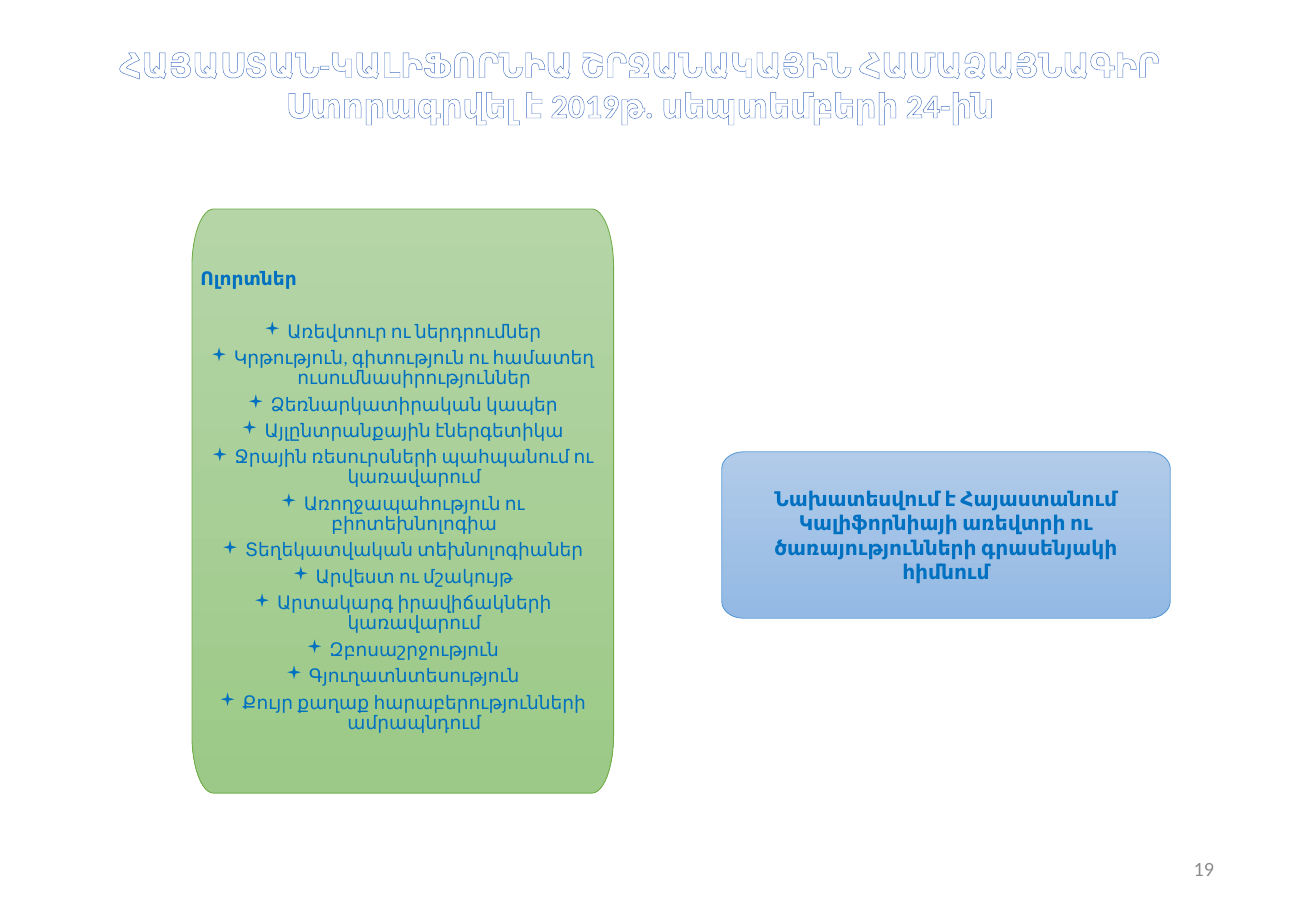
from math import cos, pi, sin

from lxml import etree
from pptx import Presentation
from pptx.dml.color import RGBColor
from pptx.enum.text import MSO_ANCHOR, MSO_AUTO_SIZE, PP_ALIGN
from pptx.oxml.ns import qn
from pptx.util import Pt

PX = 9144  # 100 px to the inch
LEFT, CENTER, RIGHT = PP_ALIGN.LEFT, PP_ALIGN.CENTER, PP_ALIGN.RIGHT
TOP, MIDDLE = MSO_ANCHOR.TOP, MSO_ANCHOR.MIDDLE
GROW = MSO_AUTO_SIZE.SHAPE_TO_FIT_TEXT

FONT = "Calibri"
BLUE = "0070C0"
CORNER_STEPS = 12

TITLE = [
    "ՀԱՅԱՍՏԱՆ-ԿԱԼԻՖՈՐՆԻԱ ՇՐՋԱՆԱԿԱՅԻՆ ՀԱՄԱՁԱՅՆԱԳԻՐ",
    "Ստորագրվել է 2019թ. սեպտեմբերի 24-ին",
]
AREAS = [
    "Առեվտուր ու ներդրումներ",
    "Կրթություն, գիտություն ու համատեղ ուսումնասիրություններ",
    "Ձեռնարկատիրական կապեր",
    "Այլընտրանքային էներգետիկա",
    "Ջրային ռեսուրսների պահպանում ու կառավարում",
    "Առողջապահություն ու բիոտեխնոլոգիա",
    "Տեղեկատվական տեխնոլոգիաներ",
    "Արվեստ ու մշակույթ",
    "Արտակարգ իրավիճակների կառավարում",
    "Զբոսաշրջություն",
    "Գյուղատնտեսություն",
    "Քույր քաղաք հարաբերությունների ամրապնդում",
]
OFFICE = "Նախատեսվում է Հայաստանում Կալիֆորնիայի առեվտրի ու ծառայությունների գրասենյակի հիմնում"


def px(n):
    return int(n * PX)


def rgb(color):
    return RGBColor.from_string(color)


def set_attrs(obj, values):
    for name, value in values.items():
        setattr(obj, name, value)


def place(sp, box):
    set_attrs(sp, dict(zip(("left", "top", "width", "height"), map(px, box))))


def add_text(tf, text, size, color, bold=False, **para):
    """Fill the frame's first paragraph if it is empty, else append one."""
    p = tf.paragraphs[0]
    if p.runs:
        p = tf.add_paragraph()
    set_attrs(p, para)
    r = p.add_run()
    r.text = text
    set_attrs(r.font, {"name": FONT, "size": Pt(size), "bold": bold})
    r.font.color.rgb = rgb(color)
    return p


def outline_text(p, color, width):
    """Draw a line round the letters of each run."""
    for r in p.runs:
        ln = etree.Element(qn("a:ln"), w=str(Pt(width)))
        fill = etree.SubElement(ln, qn("a:solidFill"))
        etree.SubElement(fill, qn("a:srgbClr"), val=color)
        r.font._element.insert(0, ln)


def add_bullet(p, indent):
    pPr = p._p.get_or_add_pPr()
    pPr.set("marL", str(px(indent)))
    pPr.set("indent", str(-px(indent)))
    etree.SubElement(pPr, qn("a:buFont"), typeface="Wingdings")
    etree.SubElement(pPr, qn("a:buChar"), char="▪")


def add_panel(slide, box, radii, colors, line):
    """Add a gradient panel with elliptical corners and return its text frame."""
    x, y, w, h = box
    rx, ry = radii
    centers = [(x + w - rx, y + h - ry), (x + rx, y + h - ry),
               (x + rx, y + ry), (x + w - rx, y + ry)]
    points = []
    for quarter, (cx, cy) in enumerate(centers):
        for step in range(CORNER_STEPS + 1):
            a = (quarter + step / CORNER_STEPS) * pi / 2
            points.append((px(cx + rx * cos(a)), px(cy + ry * sin(a))))
    builder = slide.shapes.build_freeform(*points[0])
    builder.add_line_segments(points[1:], close=True)
    sp = builder.convert_to_shape()
    sp.shadow.inherit = False
    sp.fill.gradient()
    sp.fill.gradient_angle = 270
    for stop, color in zip(sp.fill.gradient_stops, colors):
        stop.color.rgb = rgb(color)
    sp.line.color.rgb = rgb(line)
    sp.line.width = Pt(0.5)
    tf = sp.text_frame
    sides = ("left", "top", "right", "bottom")
    set_attrs(tf, {f"margin_{side}": px(7) for side in sides})
    set_attrs(tf, {"word_wrap": True, "vertical_anchor": MIDDLE})
    return tf


def add_title(slide, box):
    sp = slide.shapes.title
    place(sp, box)
    tf = sp.text_frame
    set_attrs(tf, {"word_wrap": True, "vertical_anchor": TOP, "auto_size": GROW})
    for line in TITLE:
        p = add_text(tf, line, 20, "FFFFFF", bold=True, alignment=CENTER)
        outline_text(p, "4472C4", 0.8)


def add_areas(slide, box):
    tf = add_panel(slide, box, (18, 48), ("B5D5A7", "9CC987"), "70AD47")
    add_text(tf, "Ոլորտներ", 11, BLUE, bold=True, alignment=LEFT,
             line_spacing=0.9, space_after=Pt(19.6))
    for area in AREAS:
        p = add_text(tf, area, 11, BLUE, alignment=CENTER,
                     line_spacing=0.9, space_after=Pt(3.8))
        add_bullet(p, 19)


def add_office(slide, box):
    tf = add_panel(slide, box, (18, 14), ("B1CBE9", "93B9E4"), "5B9BD5")
    add_text(tf, OFFICE, 12, BLUE, bold=True, alignment=CENTER)


def add_page_number(slide, box):
    tf = slide.shapes.add_textbox(*map(px, box)).text_frame
    set_attrs(tf, {"word_wrap": True, "vertical_anchor": MIDDLE})
    add_text(tf, "19", 12, "8C8C8C", alignment=RIGHT)


def main():
    prs = Presentation()
    set_attrs(prs, {"slide_width": px(1083), "slide_height": px(750)})
    slide = prs.slides.add_slide(prs.slide_layouts[5])
    add_title(slide, (29, 31, 995, 77))
    add_page_number(slide, (765, 695, 244, 40))
    add_areas(slide, (158, 172, 347, 481))
    add_office(slide, (594, 372, 369, 137))
    prs.save("out.pptx")


if __name__ == "__main__":
    main()
